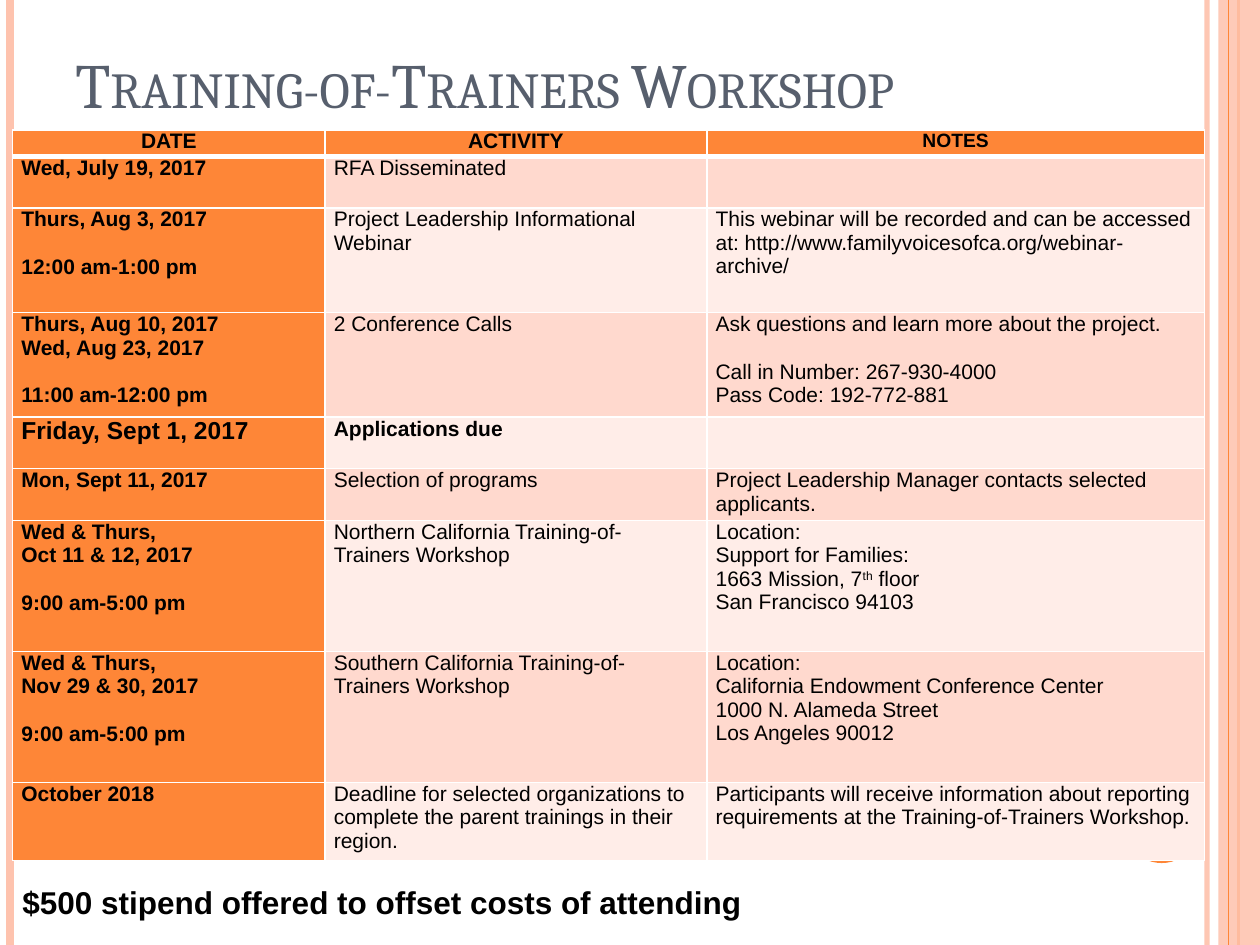
from dataclasses import dataclass

from lxml import etree
from pptx import Presentation
from pptx import util as u
from pptx.dml.color import RGBColor
from pptx.enum import shapes, text
from pptx.oxml.ns import qn


@dataclass(frozen=True)
class Theme:
    orange: str = "FE8637"
    peach: str = "FEC3AE"
    bands: tuple = ("FFD9CE", "FFEDE8")
    slate: str = "575F6D"
    black: str = "000000"
    white: str = "FFFFFF"
    heading_font: str = "Cambria"
    body_font: str = "Arial"
    title_size: int = 36
    footer_size: int = 18
    body_size: int = 12
    gap: float = 13.8  # one line of body text


THEME = Theme()
WIDTH, HEIGHT = 10, 7.5

TITLE = "Training-of-Trainers Workshop"
FOOTER = "$500 stipend offered to offset costs of attending"

# A line break starts a paragraph, a double break a spaced one; ^marks^ superscript.
SCHEDULE = [
    ("DATE", "ACTIVITY", "NOTES"),
    ("Wed, July 19, 2017", "RFA Disseminated", ""),
    ("Thurs, Aug 3, 2017\n\n12:00 am-1:00 pm",
     "Project Leadership Informational Webinar",
     "This webinar will be recorded and can be accessed at: "
     "http://www.familyvoicesofca.org/webinar-archive/"),
    ("Thurs, Aug 10, 2017\nWed, Aug 23, 2017\n\n11:00 am-12:00 pm",
     "2 Conference Calls",
     "Ask questions and learn more about the project.\n\n"
     "Call in Number: 267-930-4000\nPass Code: 192-772-881"),
    ("Friday, Sept 1, 2017", "Applications due", ""),
    ("Mon, Sept 11, 2017", "Selection of programs",
     "Project Leadership Manager contacts selected applicants."),
    ("Wed & Thurs,\nOct 11 & 12, 2017\n\n9:00 am-5:00 pm",
     "Northern California Training-of-Trainers Workshop",
     "Location:\nSupport for Families:\n1663 Mission, 7^th^ floor\nSan Francisco 94103"),
    ("Wed & Thurs,\nNov 29 & 30, 2017\n\n9:00 am-5:00 pm",
     "Southern California Training-of-Trainers Workshop",
     "Location:\nCalifornia Endowment Conference Center\n"
     "1000 N. Alameda Street\nLos Angeles 90012"),
    ("October 2018",
     "Deadline for selected organizations to complete the parent trainings in their region.",
     "Participants will receive information about reporting requirements "
     "at the Training-of-Trainers Workshop."),
]
COLUMNS = (2.48, 3.03, 3.95)
ROWS = (0.21, 0.41, 0.83, 0.83, 0.41, 0.41, 1.04, 1.04, 0.62)
SPECIAL_SIZES = {"NOTES": 11, "Friday, Sept 1, 2017": 14}
BOLD_ACTIVITY = "Applications due"

# Vertical rules behind and in front of the right-hand band: x, colour, points, opacity %
RULES_BEHIND = [(9.58, THEME.peach, 3, 93), (0.08, THEME.peach, 4.5, 100),
                (9.83, THEME.orange, 1.5, 100)]
RULES_FRONT = [(9.75, THEME.orange, 0.75, 100)]


def rgb(value):
    return RGBColor.from_string(value)


def set_opacity(element, percent):
    if percent < 100:
        for color in element.iter(qn("a:srgbClr")):
            etree.SubElement(color, qn("a:alpha")).set("val", str(percent * 1000))


def add_rules(page, rules):
    for x, color, points, opacity in rules:
        line = page.shapes.add_connector(
            shapes.MSO_CONNECTOR.STRAIGHT, u.Inches(x), 0, u.Inches(x), u.Inches(HEIGHT))
        line.line.color.rgb = rgb(color)
        line.line.width = u.Pt(points)
        properties = line._element.spPr
        set_opacity(properties, opacity)
        etree.SubElement(properties, qn("a:effectLst"))


def add_solid(page, kind, place, color, opacity=100):
    shape = page.shapes.add_shape(kind, *map(u.Inches, place))
    shape.shadow.inherit = False
    shape.fill.solid()
    shape.fill.fore_color.rgb = rgb(color)
    shape.line.fill.background()
    set_opacity(shape._element.spPr, opacity)


def style_font(font, name, size, color, bold=False):
    font.name, font.size, font.bold = name, u.Pt(size), bold
    font.color.rgb = rgb(color)


def add_text(page, place, words, anchor, *style):
    box = page.shapes.add_textbox(*map(u.Inches, place))
    frame = box.text_frame
    frame.word_wrap = True
    frame.vertical_anchor = anchor
    frame.text = words
    span = frame.paragraphs[0].runs[0]
    style_font(span.font, *style)
    return span


def set_borders(cell, top, bottom):
    properties = cell._tc.get_or_add_tcPr()
    sides = (("lnL", 1), ("lnR", 1), ("lnT", top), ("lnB", bottom))
    for index, (side, points) in enumerate(sides):
        line = etree.Element(qn(f"a:{side}"), w=str(u.Pt(points)))
        fill = etree.SubElement(line, qn("a:solidFill"))
        etree.SubElement(fill, qn("a:srgbClr"), val=THEME.white)
        properties.insert(index, line)


def write_cell(cell, words, bold, centred):
    frame = cell.text_frame
    size = SPECIAL_SIZES.get(words, THEME.body_size)
    para, spaced = frame.paragraphs[0], False
    for index, line in enumerate(words.split("\n")):
        if index and not line:
            spaced = True
            continue
        if index:
            para = frame.add_paragraph()
        if spaced:
            para.space_before, spaced = u.Pt(THEME.gap), False
        if centred:
            para.alignment = text.PP_ALIGN.CENTER
        if not line:
            para.font.size = u.Pt(size)
            continue
        for position, part in enumerate(line.split("^")):
            span = para.add_run()
            span.text = part
            style_font(span.font, THEME.body_font, size, THEME.black, bold)
            if position % 2:
                span.font._element.set("baseline", "30000")


def add_schedule(page):
    place = (0.1, 1.03, sum(COLUMNS), sum(ROWS))
    table = page.shapes.add_table(
        len(ROWS), len(COLUMNS), *map(u.Inches, place)).table
    for column, width in zip(table.columns, COLUMNS):
        column.width = u.Inches(width)
    for r, (height, entries) in enumerate(zip(ROWS, SCHEDULE)):
        table.rows[r].height = u.Inches(height)
        for c, words in enumerate(entries):
            cell = table.cell(r, c)
            cell.margin_left = cell.margin_right = u.Inches(0.07)
            cell.margin_top = cell.margin_bottom = 0
            heading = r == 0 or c == 0
            cell.fill.solid()
            cell.fill.fore_color.rgb = rgb(
                THEME.orange if heading else THEME.bands[(r - 1) % 2])
            set_borders(cell, 3 if r == 1 else 1, 3 if r == 0 else 1)
            write_cell(cell, words, heading or words == BOLD_ACTIVITY, r == 0)


def main():
    deck = Presentation()
    deck.slide_width, deck.slide_height = u.Inches(WIDTH), u.Inches(HEIGHT)
    page = deck.slides.add_slide(deck.slide_layouts[6])
    page.background.fill.solid()
    page.background.fill.fore_color.rgb = rgb(THEME.white)

    add_rules(page, RULES_BEHIND)
    add_solid(page, shapes.MSO_SHAPE.RECTANGLE, (9.67, 0, 0.33, HEIGHT), THEME.peach, 87)
    add_rules(page, RULES_FRONT)
    add_solid(page, shapes.MSO_SHAPE.OVAL, (8.92, 6.25, 0.6, 0.6), THEME.orange)

    title = add_text(page, (0.5, 0.18, 8.5, 0.83), TITLE, text.MSO_ANCHOR.BOTTOM,
                     THEME.heading_font, THEME.title_size, THEME.slate)
    title.font._element.set("cap", "small")
    add_schedule(page)
    add_text(page, (0.08, 6.96, 7.83, 0.5), FOOTER, text.MSO_ANCHOR.TOP,
             THEME.body_font, THEME.footer_size, THEME.black, True)
    deck.save("out.pptx")


if __name__ == "__main__":
    main()
